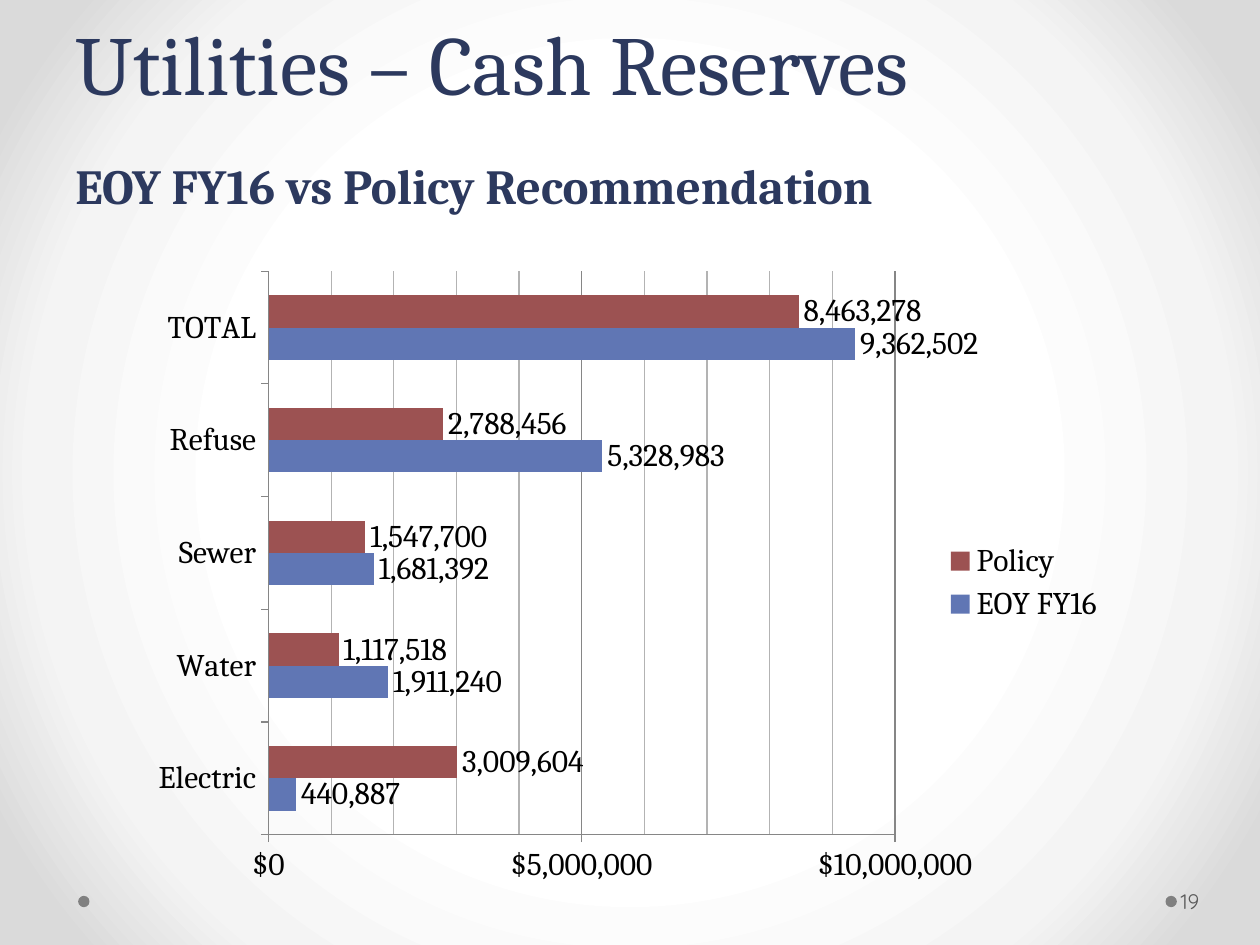
from dataclasses import dataclass

import pptx
import pptx.chart.data
import pptx.dml.color
import pptx.enum.chart
import pptx.enum.shapes
import pptx.enum.text
import pptx.oxml
import pptx.oxml.ns
import pptx.util

WIDTH, HEIGHT = 10, 7.5
SERIF, SANS = "Cambria", "Quicksand"
COLORS = {
    "title": "2C395E",
    "black": "000000",
    "dot": "808080",
    "number": "595959",
    "actual": "6076B4",
    "policy": "9C5252",
    "axis": "868686",
    "minor": "B3B3B3",
}
BACKDROP = ((50, "FFFFFF"), (76, "F4F4F4"), (92, "DADADA"))
CATEGORIES = ("Electric", "Water", "Sewer", "Refuse", "TOTAL")
PLOT = {"x": 0.191, "y": 0.029, "w": 0.597, "h": 0.852}


@dataclass(frozen=True)
class Area:
    left: float
    top: float
    width: float
    height: float

    def emu(self) -> tuple:
        return (
            pptx.util.Inches(self.left * WIDTH),
            pptx.util.Inches(self.top * HEIGHT),
            pptx.util.Inches(self.width * WIDTH),
            pptx.util.Inches(self.height * HEIGHT),
        )


@dataclass(frozen=True)
class Span:
    text: str
    size: float
    font: str
    color: str
    bold: bool = False


@dataclass(frozen=True)
class Reserve:
    name: str
    values: tuple
    color: str


DOTS = tuple(Area(left / WIDTH, 7.11 / HEIGHT, 0.09 / WIDTH, 0.09 / HEIGHT) for left in (9.25, 0.62))
TITLE_AREA = Area(0.05, 0, 0.9, 1.75 / HEIGHT)
CHART_AREA = Area(0.054, 2 / HEIGHT, 0.833, 0.7)
NUMBER_AREA = Area(0.934, 6.95 / HEIGHT, 0.061, 0.4 / HEIGHT)
TITLE = (
    Span("Utilities – Cash Reserves", 48, SERIF, "title"),
    Span("EOY FY16 vs Policy Recommendation", 28, SERIF, "title", True),
)
RESERVES = (
    Reserve("EOY FY16", (440887, 1911240, 1681392, 5328983, 9362502), "actual"),
    Reserve("Policy ", (3009604, 1117518, 1547700, 2788456, 8463278), "policy"),
)


def rgb(name: str) -> pptx.dml.color.RGBColor:
    return pptx.dml.color.RGBColor.from_string(COLORS[name])


def paint_background(page) -> None:
    page.background.fill.gradient()
    gradient = page.element.find(".//" + pptx.oxml.ns.qn("a:gradFill"))
    stops = "".join(
        f'<a:gs pos="{share * 1000}"><a:srgbClr val="{color}"/></a:gs>'
        for share, color in BACKDROP
    )
    fresh = pptx.oxml.parse_xml(
        f'<a:gradFill {pptx.oxml.ns.nsdecls("a")} rotWithShape="1">'
        f'<a:gsLst>{stops}</a:gsLst><a:path path="circle">'
        '<a:fillToRect l="50000" t="50000" r="50000" b="50000"/></a:path></a:gradFill>'
    )
    gradient.getparent().replace(gradient, fresh)


def add_dot(page, area: Area) -> None:
    dot = page.shapes.add_shape(pptx.enum.shapes.MSO_SHAPE.OVAL, *area.emu())
    dot.shadow.inherit = False
    dot.fill.solid()
    dot.fill.fore_color.rgb = rgb("dot")
    dot.line.fill.background()


def add_text(page, area: Area, spans: tuple, anchor, spacing=None, left_inset: float = 0.1,
             right_inset: float = 0.1) -> None:
    frame = page.shapes.add_textbox(*area.emu()).text_frame
    frame.word_wrap = True
    frame.vertical_anchor = anchor
    frame.margin_left = pptx.util.Inches(left_inset)
    frame.margin_right = pptx.util.Inches(right_inset)
    para = frame.paragraphs[0]
    para.line_spacing = spacing
    for index, span in enumerate(spans):
        if index:
            para.add_line_break()
        run = para.add_run()
        run.text = span.text
        run.font.size = pptx.util.Pt(span.size)
        run.font.name = span.font
        run.font.bold = span.bold
        run.font.color.rgb = rgb(span.color)


def draw_line(line, color: str) -> None:
    line.color.rgb = rgb(color)
    line.width = pptx.util.Pt(0.75)


def place_plot(chart) -> None:
    area = chart.element.find(".//" + pptx.oxml.ns.qn("c:plotArea"))
    for layout in area.findall(pptx.oxml.ns.qn("c:layout")):
        area.remove(layout)
    modes = "".join(f'<c:{side}Mode val="edge"/>' for side in "xy")
    shares = "".join(f'<c:{side} val="{share}"/>' for side, share in PLOT.items())
    area.insert(0, pptx.oxml.parse_xml(
        f'<c:layout {pptx.oxml.ns.nsdecls("c")}><c:manualLayout>'
        f'<c:layoutTarget val="inner"/>{modes}{shares}</c:manualLayout></c:layout>'
    ))


def add_minor_gridlines(chart) -> None:
    major = chart.element.find(".//" + pptx.oxml.ns.qn("c:valAx")).find(
        pptx.oxml.ns.qn("c:majorGridlines")
    )
    major.addnext(pptx.oxml.parse_xml(
        f'<c:minorGridlines {pptx.oxml.ns.nsdecls("c", "a")}><c:spPr>'
        f'<a:ln w="{pptx.util.Pt(0.75)}"><a:solidFill><a:srgbClr val="{COLORS["minor"]}"/>'
        '</a:solidFill></a:ln></c:spPr></c:minorGridlines>'
    ))


def style_axes(chart) -> None:
    for axis in (chart.category_axis, chart.value_axis):
        axis.major_tick_mark = pptx.enum.chart.XL_TICK_MARK.OUTSIDE
        axis.minor_tick_mark = pptx.enum.chart.XL_TICK_MARK.NONE
        draw_line(axis.format.line, "axis")
    amounts = chart.value_axis
    amounts.minimum_scale, amounts.maximum_scale = 0, 10_000_000
    amounts.major_unit, amounts.minor_unit = 5_000_000, 1_000_000
    amounts.has_major_gridlines = True
    draw_line(amounts.major_gridlines.format.line, "axis")
    add_minor_gridlines(chart)
    amounts.tick_labels.number_format = '"$"#,##0'
    amounts.tick_labels.number_format_is_linked = False


def add_reserve_chart(page, area: Area) -> None:
    data = pptx.chart.data.CategoryChartData()
    data.categories = CATEGORIES
    for reserve in RESERVES:
        data.add_series(reserve.name, reserve.values)
    kind = pptx.enum.chart.XL_CHART_TYPE.BAR_CLUSTERED
    chart = page.shapes.add_chart(kind, *area.emu(), data).chart
    chart.has_title = False
    chart.font.name = SERIF
    chart.font.size = pptx.util.Pt(18)
    chart.font.color.rgb = rgb("black")
    chart.has_legend = True
    chart.legend.position = pptx.enum.chart.XL_LEGEND_POSITION.RIGHT
    chart.legend.include_in_layout = False
    plot = chart.plots[0]
    plot.gap_width = 150
    plot.vary_by_categories = False
    for series, reserve in zip(plot.series, RESERVES):
        series.format.fill.solid()
        series.format.fill.fore_color.rgb = rgb(reserve.color)
        labels = series.data_labels
        labels.show_value = True
        labels.number_format = "#,##0"
        labels.number_format_is_linked = False
        labels.position = pptx.enum.chart.XL_LABEL_POSITION.OUTSIDE_END
    style_axes(chart)
    place_plot(chart)


def main() -> None:
    deck = pptx.Presentation()
    deck.slide_width = pptx.util.Inches(WIDTH)
    deck.slide_height = pptx.util.Inches(HEIGHT)
    page = deck.slides.add_slide(deck.slide_layouts[6])
    paint_background(page)
    for area in DOTS:
        add_dot(page, area)
    anchors = pptx.enum.text.MSO_ANCHOR
    add_text(page, TITLE_AREA, TITLE, anchors.BOTTOM, pptx.util.Pt(58))
    add_reserve_chart(page, CHART_AREA)
    number = (Span("19", 12, SANS, "number"),)
    add_text(page, NUMBER_AREA, number, anchors.MIDDLE, left_inset=0.03, right_inset=0.05)
    deck.save("out.pptx")


if __name__ == "__main__":
    main()
